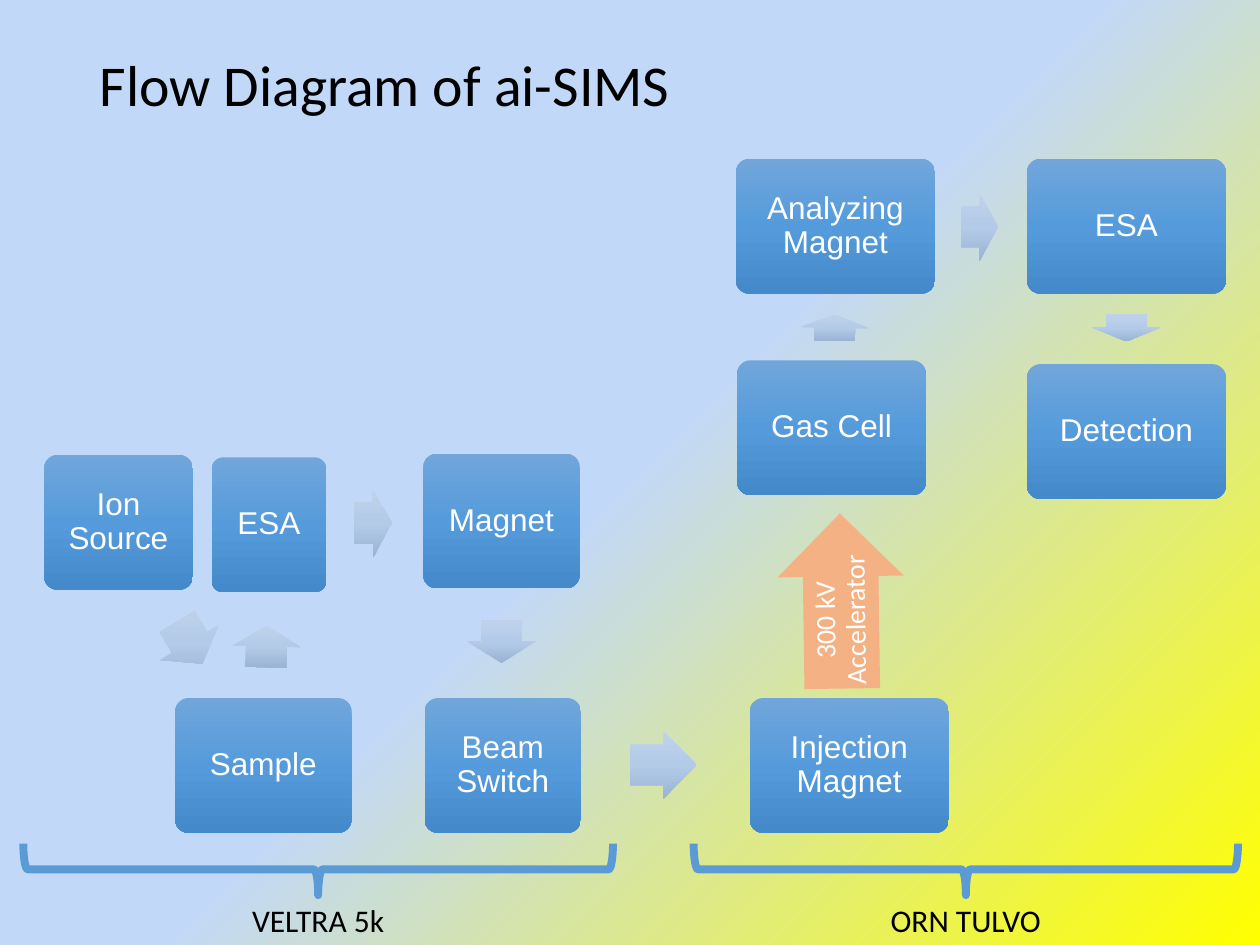
import pptx
import pptx.util
import pptx.dml.color
import pptx.enum.shapes
import pptx.enum.text
import pptx.oxml
import pptx.oxml.ns

RGB = pptx.dml.color.RGBColor
SHAPE = pptx.enum.shapes.MSO_SHAPE
ALIGN = pptx.enum.text.PP_ALIGN
MIDDLE = pptx.enum.text.MSO_ANCHOR.MIDDLE
qn = pptx.oxml.ns.qn

BLACK = RGB(0x00, 0x00, 0x00)
WHITE = RGB(0xFF, 0xFF, 0xFF)
PEACH = RGB(0xF4, 0xB1, 0x83)
BLUE = RGB(0x5B, 0x9B, 0xD5)
SKY = RGB(0xC2, 0xD8, 0xF8)
YELLOW = RGB(0xFF, 0xFF, 0x00)
NODE = [(0, RGB(0x71, 0xA6, 0xDB)), (50, RGB(0x55, 0x9B, 0xDB)),
        (100, RGB(0x44, 0x8A, 0xCA))]
ARROW = [(0, RGB(0xC0, 0xD2, 0xEB)), (50, RGB(0xB3, 0xCB, 0xE9)),
         (100, RGB(0x9B, 0xB4, 0xD3))]
BACK = [(0, SKY), (50, SKY), (100, YELLOW)]

# Grid of 20 columns by 15 rows
WIDTH, HEIGHT = pptx.util.Inches(10), pptx.util.Inches(7.5)
COL, ROW = WIDTH / 20, HEIGHT / 15
NODE_H, ARROW_H, BRACE_H = 2.14, 1.08, 0.82


def cells(left, top, wide, high):
    """Turn grid cells into slide lengths."""
    return int(left * COL), int(top * ROW), int(wide * COL), int(high * ROW)


def blend(fill, root, stops, angle):
    """Fill with a gradient that keeps its direction when the shape turns."""
    fill.gradient()
    grad = next(root.iter(qn("a:gradFill")))
    grad.set("rotWithShape", "0")
    old = grad.find(qn("a:gsLst"))
    new = pptx.oxml.parse_xml(
        '<a:gsLst xmlns:a="http://schemas.openxmlformats.org/drawingml/2006/main">'
        + "".join(f'<a:gs pos="{pos * 1000}"><a:srgbClr val="{tone}"/></a:gs>'
                  for pos, tone in stops)
        + "</a:gsLst>")
    grad.replace(old, new)
    line = grad.find(qn("a:lin"))
    line.set("ang", str(angle * 60000))
    line.set("scaled", "0")


def write(shape, text, size=18, font="Arial", color=WHITE,
          align=ALIGN.CENTER, space=0.9, inset=0.1):
    """Set a shape's text and its format."""
    frame = shape.text_frame
    frame.word_wrap = True
    frame.vertical_anchor = MIDDLE
    frame.margin_left = frame.margin_right = pptx.util.Inches(inset)
    frame.margin_top = frame.margin_bottom = pptx.util.Inches(inset / 2)
    frame.text = text
    para = frame.paragraphs[0]
    para.alignment = align
    para.line_spacing = space
    para.font.size = pptx.util.Pt(size)
    para.font.name = font
    para.font.color.rgb = color


def draw(slide, kind, box, turn=0):
    """Add a plain shape without line or shadow."""
    shape = slide.shapes.add_shape(kind, *cells(*box))
    shape.shadow.inherit = False
    shape.line.fill.background()
    shape.rotation = turn
    return shape


def node(slide, box, text):
    """Add one stage of the flow."""
    shape = draw(slide, SHAPE.ROUNDED_RECTANGLE, box)
    shape.adjustments[0] = 0.1
    blend(shape.fill, shape._element, NODE, 90)
    write(shape, text)


def arrow(slide, mid_x, mid_y, wide, high, turn):
    """Add an arrow about its centre."""
    box = (mid_x - wide / 2, mid_y - high / 2, wide, high)
    shape = draw(slide, SHAPE.RIGHT_ARROW, box, turn)
    shape.adjustments[0], shape.adjustments[1] = 0.6, 0.5
    return shape


def flow(slide, box, nodes, arrows, label):
    """Place one instrument's stages, arrows, brace and label in a box."""
    left, top, wide, high = box
    mid, base = left + wide / 2, top + high

    for text, col, row, span in nodes:
        node(slide, (left + col, top + row, span, NODE_H), text)
    for col, row, span, turn in arrows:
        shape = arrow(slide, left + col, top + row, span, ARROW_H, turn)
        blend(shape.fill, shape._element, ARROW, 90)

    # Brace along the foot of the box, turned about its centre
    brace = draw(slide, SHAPE.RIGHT_BRACE,
                 (mid - BRACE_H / 2, base - BRACE_H / 2 - wide / 2, BRACE_H, wide), 90)
    brace.fill.background()
    brace.line.color.rgb = BLUE
    brace.line.width = pptx.util.Pt(4.5)

    note = slide.shapes.add_textbox(*cells(mid - 2, base, 4, 0.8))
    write(note, label, font="Calibri", color=BLACK, space=1)


def boost(slide, mid_x, mid_y):
    """Place the accelerator arrow about a centre."""
    shape = arrow(slide, mid_x, mid_y, 2.78, 2, 269.2)
    shape.fill.solid()
    shape.fill.fore_color.rgb = PEACH
    write(shape, "300 kV Accelerator", size=16, font="Calibri", inset=0)


def head(slide, box):
    """Place the title."""
    title = slide.shapes.title
    title.left, title.top, title.width, title.height = cells(*box)
    write(title, "Flow Diagram of ai-SIMS", size=33, font="Calibri",
          color=BLACK, align=ALIGN.LEFT)


def main():
    deck = pptx.Presentation()
    deck.slide_width, deck.slide_height = WIDTH, HEIGHT
    slide = deck.slides.add_slide(deck.slide_layouts[5])
    blend(slide.background.fill, slide._element, BACK, 45)
    head(slide, (1.38, 0.54, 17.24, 1.72))

    # Ion source side: stages (text, column, row, width), arrows (centre, length, turn)
    flow(slide, (0.37, 7.2, 9.36, 7.01),
         [("Ion Source", 0.33, 0.02, 2.36), ("Sample", 2.41, 3.88, 2.8),
          ("ESA", 2.99, 0.06, 1.82), ("Magnet", 6.35, 0, 2.48),
          ("Beam Switch", 6.37, 3.88, 2.48)],
         [(2.64, 3, 0.78, 59), (3.86, 3.06, 0.66, 271.2),
          (5.55, 1.1, 0.6, 359.1), (7.59, 2.98, 0.68, 89.8),
          (10.16, 4.94, 1.06, 0)],
         "VELTRA 5k")

    # Accelerator side
    flow(slide, (11.01, 2.52, 8.64, 11.69),
         [("Injection Magnet", 0.89, 8.56, 3.16), ("Gas Cell", 0.69, 3.2, 3),
          ("Analyzing Magnet", 0.67, 0, 3.16), ("ESA", 5.29, 0, 3.16),
          ("Detection", 5.29, 3.26, 3.16)],
         [(2.35, 7, 1.28, 267), (2.24, 2.68, 0.42, 271.1),
          (4.54, 1.08, 0.58, 0), (6.87, 2.68, 0.44, 90)],
         "ORN TULVO")
    boost(slide, 13.35, 9.54)

    deck.save("out.pptx")


if __name__ == "__main__":
    main()
